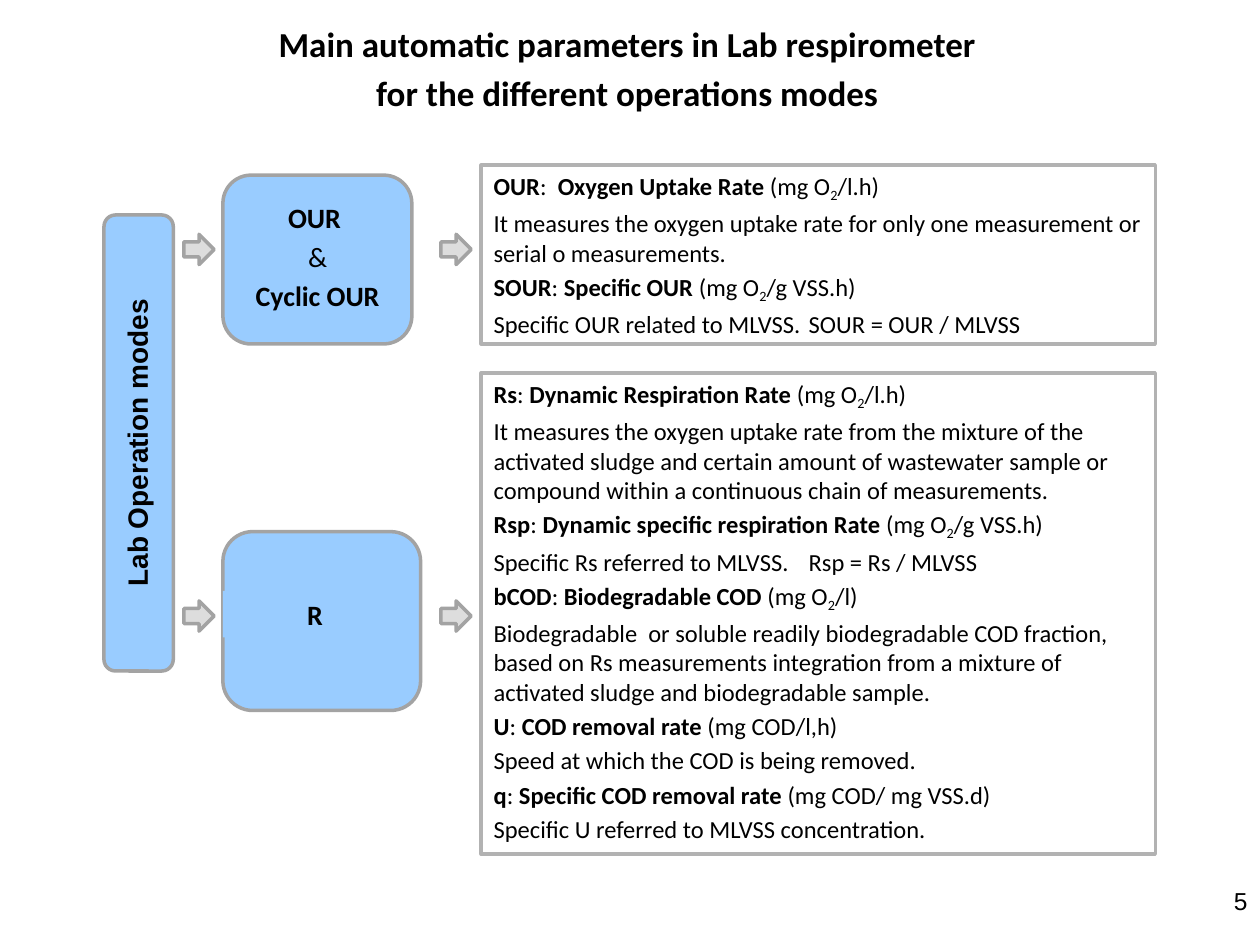
import pptx
import pptx.dml.color
import pptx.enum.shapes
import pptx.enum.text
import pptx.util

Pt = pptx.util.Pt
SHAPE = pptx.enum.shapes.MSO_SHAPE
ALIGN = pptx.enum.text.PP_ALIGN
BLUE, GRAY, FRAME, SILVER = "99CCFF", "A3A3A3", "B2B2B2", "DDDDDD"

TITLE = ["Main automatic parameters in Lab respirometer ", "for the different operations modes "]
SINGLE_PARAMETERS = [
    ("OUR", ":  ", "Oxygen Uptake Rate ", "(mg O", "2", "/l.h)"),
    ("It measures the oxygen uptake rate for only one measurement or serial o measurements.",),
    ("SOUR", ": ", "Specific OUR ", "(mg O", "2", "/g VSS.h)"),
    ("Specific OUR related to MLVSS.\tSOUR = OUR / MLVSS",),
]
DYNAMIC_PARAMETERS = [
    ("Rs", ": ", "Dynamic Respiration Rate ", "(mg O", "2", "/l.h)"),
    ("It measures the oxygen uptake rate from the mixture of the activated sludge and certain "
     "amount of wastewater sample or compound within a continuous chain of measurements.",),
    ("Rsp", ": ", "Dynamic specific respiration Rate ", "(mg O", "2", "/g VSS.h)"),
    ("Specific Rs referred to MLVSS.\tRsp = Rs / MLVSS",),
    ("bCOD", ": ", "Biodegradable COD ", "(mg O", "2", "/l)"),
    ("Biodegradable  or soluble readily biodegradable COD fraction, based on Rs measurements "
     "integration from a mixture of activated sludge and biodegradable sample.",),
    ("U", ": ", "COD removal rate ", "(mg COD/l,h)"),
    ("Speed at which the COD is being removed.",),
    ("q", ": ", "Specific COD removal rate ", "(mg COD/ mg VSS.d)"),
    ("Specific U referred to MLVSS concentration.",),
]


def color(value):
    """Return the RGB colour of a hex string."""
    return pptx.dml.color.RGBColor.from_string(value)


def add_box(shapes, kind, box, fill, line=None, width=2):
    """Add a filled preset shape, outlined when a line colour is given."""
    shape = shapes.add_shape(kind, *map(Pt, box))
    shape.shadow.inherit = False
    shape.fill.solid()
    shape.fill.fore_color.rgb = color(fill)
    if line:
        shape.line.color.rgb = color(line)
        shape.line.width = Pt(width)
    else:
        shape.line.fill.background()
    return shape


def format_run(run, size, bold, name="Calibri"):
    """Set the font of one run."""
    run.font.size = Pt(size)
    run.font.bold = bold
    run.font.name = name
    run.font.color.rgb = color("000000")


def prepare_frame(shape, size, align):
    """Wrap the text from the top and space all its paragraphs."""
    frame = shape.text_frame
    frame.word_wrap = True
    frame.vertical_anchor = pptx.enum.text.MSO_ANCHOR.TOP
    for paragraph in frame.paragraphs:
        paragraph.alignment = align
        paragraph.space_before = Pt(0.2 * size)


def write_lines(shape, lines, size, align=ALIGN.CENTER, name="Calibri", plain=()):
    """Write one paragraph per line, bold unless listed as plain."""
    shape.text_frame.text = "\n".join(lines)
    prepare_frame(shape, size, align)
    for paragraph in shape.text_frame.paragraphs:
        for run in paragraph.runs:
            format_run(run, size, run.text not in plain, name)


def build_title(slide, box):
    """Place the two-line title."""
    write_lines(slide.shapes.add_textbox(*map(Pt, box)), TITLE, 20)


def build_page_number(slide, box):
    """Place the page number at the right."""
    shape = slide.shapes.add_textbox(*map(Pt, box))
    write_lines(shape, ["5"], 14, ALIGN.RIGHT, "Arial", plain=("5",))


def build_mode_bar(slide, box):
    """Place the bar that reads upwards, with its caption in the middle."""
    left, top, width, height = box
    group = slide.shapes.add_group_shape()
    center, middle = left + width / 2, top + height / 2

    def turned(kind, x, length, depth, line=None):
        """Add a shape centred on x and turned to read upwards."""
        place = (x - length / 2, middle - depth / 2, length, depth)
        shape = add_box(group.shapes, kind, place, BLUE, line)
        shape.rotation = 270
        return shape

    turned(SHAPE.ROUNDED_RECTANGLE, center, height, width, GRAY)
    caption = turned(SHAPE.RECTANGLE, center - 1, 215.3, 26.6)
    write_lines(caption, ["Lab Operation modes"], 16, name="Arial")


def build_mode(slide, box, caption_offset, caption_size, lines):
    """Place a rounded mode box with its caption offset from the corner."""
    left, top = box[:2]
    group = slide.shapes.add_group_shape()
    add_box(group.shapes, SHAPE.ROUNDED_RECTANGLE, box, BLUE, GRAY)
    place = (left + caption_offset[0], top + caption_offset[1], *caption_size)
    caption = add_box(group.shapes, SHAPE.RECTANGLE, place, BLUE)
    write_lines(caption, lines, 16, plain=("&",))


def build_arrows(slide, top):
    """Place the arrows before and after a mode box."""
    for left in (105.1, 252):
        add_box(slide.shapes, SHAPE.RIGHT_ARROW, (left, top, 17.3, 17.3), SILVER, GRAY)


def build_parameters(slide, box, entries):
    """Place a framed list of terms, units and explanations."""
    shape = add_box(slide.shapes, SHAPE.RECTANGLE, box, "FFFFFF", FRAME)
    frame = shape.text_frame
    for number, pieces in enumerate(entries):
        paragraph = frame.add_paragraph() if number else frame.paragraphs[0]
        for index, piece in enumerate(pieces):
            run = paragraph.add_run()
            run.text = piece
            format_run(run, 14, len(pieces) > 1 and index in (0, 2))
            if index == 4:
                run.font._element.set("baseline", "-20000")
    prepare_frame(shape, 14, ALIGN.LEFT)


def main():
    """Build the slide and save it."""
    presentation = pptx.Presentation()
    presentation.slide_width, presentation.slide_height = Pt(720), Pt(540)
    slide = presentation.slides.add_slide(presentation.slide_layouts[6])
    build_page_number(slide, (552.2, 502.6, 167.8, 37.4))
    build_title(slide, (54, 9.4, 613.4, 60.5))
    build_mode_bar(slide, (59.4, 122.8, 39.6, 260.6))
    build_mode(slide, (127.4, 100.1, 108, 96.5), (4.4, 10.8), (99.4, 73.4),
               ["OUR ", "&", "Cyclic OUR"])
    build_mode(slide, (127.4, 303.8, 113, 102.2), (0, 33.9), (108.7, 26.6), ["R "])
    for top in (133.9, 343.4):
        build_arrows(slide, top)
    build_parameters(slide, (275, 94.3, 385.2, 102.2), SINGLE_PARAMETERS)
    build_parameters(slide, (275, 213.1, 385.2, 275), DYNAMIC_PARAMETERS)
    presentation.save("out.pptx")


if __name__ == "__main__":
    main()
